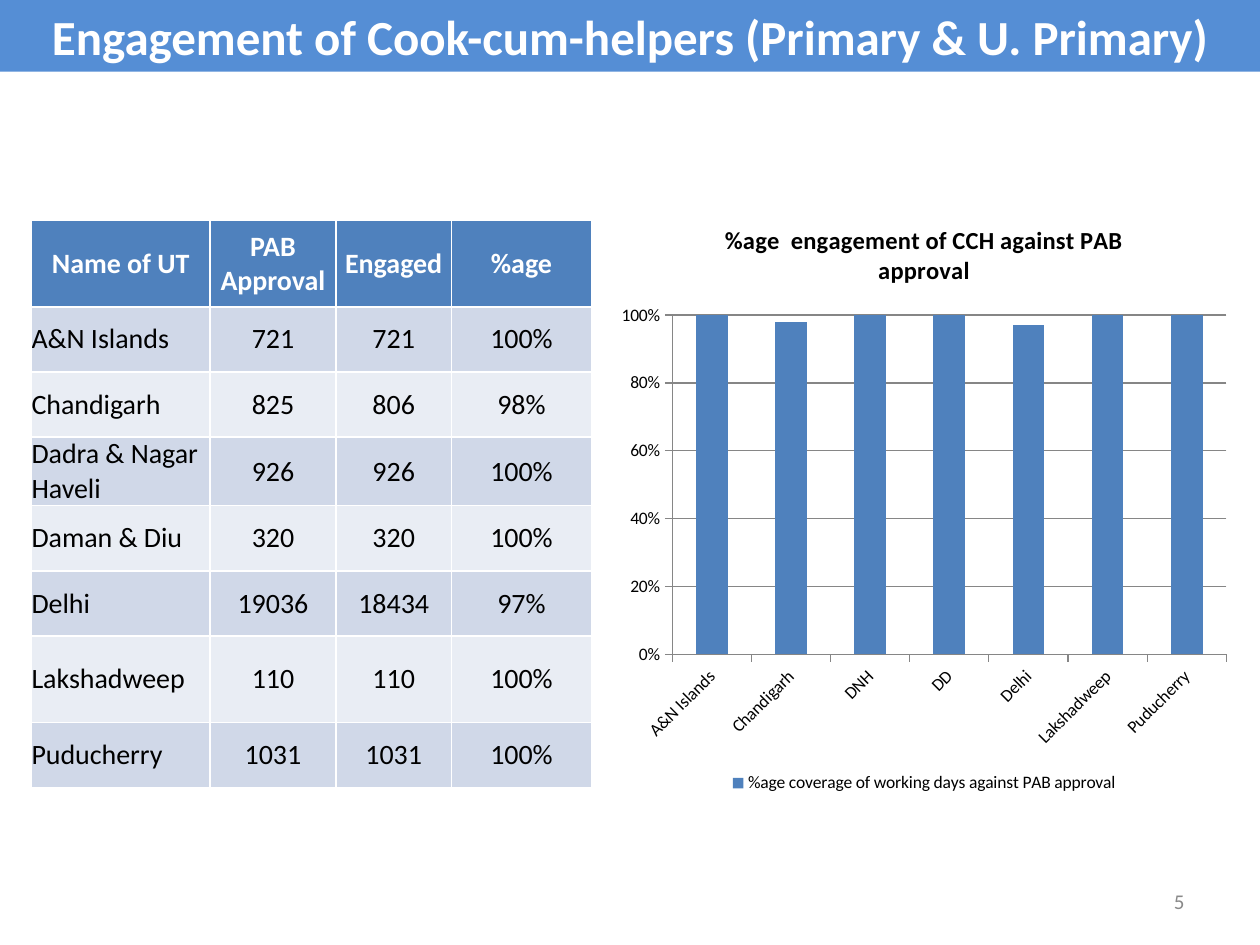
from pptx import Presentation
from pptx.chart.data import CategoryChartData
from pptx.dml.color import RGBColor
from pptx.enum import chart as ch
from pptx.enum.text import MSO_ANCHOR, PP_ALIGN
from pptx.util import Pt

FONT = "Calibri"
TITLE = "Engagement of Cook-cum-helpers (Primary & U. Primary)"
PAGE = "5"
HEADER = ("Name of UT", "PAB Approval", "Engaged", "%age")
# name in the table, name in the chart, approved, engaged, share engaged
TERRITORIES = [
    ("A&N Islands", "A&N Islands", 721, 721, 1),
    ("Chandigarh", "Chandigarh", 825, 806, 0.98),
    ("Dadra & Nagar Haveli", "DNH", 926, 926, 1),
    ("Daman & Diu", "DD", 320, 320, 1),
    ("Delhi", "Delhi", 19036, 18434, 0.97),
    ("Lakshadweep", "Lakshadweep", 110, 110, 1),
    ("Puducherry", "Puducherry", 1031, 1031, 1),
]
CHART_TITLE = "%age  engagement of CCH against PAB approval"
SERIES = "%age coverage of working days against PAB approval"

COLUMN_WIDTHS = (102, 72, 66, 80)
ROW_HEIGHT, TALL_ROW_HEIGHT = 37.3, 49.3
TALL_ROWS = ("Name of UT", "Lakshadweep")
BLUE, GRID = "4F81BD", "868686"
BANDS = ("D0D8E8", "E9EDF4")


def paint(fill, colour):
    fill.solid()
    fill.fore_color.rgb = RGBColor.from_string(colour)


def style(font, size, colour="000000", bold=False):
    font.name, font.size, font.bold = FONT, Pt(size), bold
    font.color.rgb = RGBColor.from_string(colour)


def write(frame, content, size, colour, bold=False, align=PP_ALIGN.CENTER):
    frame.text = content
    frame.word_wrap = True
    frame.vertical_anchor = MSO_ANCHOR.MIDDLE
    paragraph = frame.paragraphs[0]
    paragraph.alignment = align
    style(paragraph.runs[0].font, size, colour, bold)


def add_title(slide):
    title = slide.shapes.title
    title.left, title.top, title.width, title.height = Pt(0), Pt(0), Pt(720), Pt(41)
    paint(title.fill, "558ED5")
    write(title.text_frame, TITLE, 28, "FFFFFF", bold=True)


def add_staff_chart(slide):
    data = CategoryChartData(number_format="0%")
    data.categories = [short for _, short, *_ in TERRITORIES]
    data.add_series(SERIES, [share for *_, share in TERRITORIES])
    chart = slide.shapes.add_chart(ch.XL_CHART_TYPE.COLUMN_CLUSTERED,
                                   Pt(348), Pt(114), Pt(360), Pt(342), data).chart
    style(chart.font, 10)
    chart.has_title = True
    chart.chart_title.text_frame.text = CHART_TITLE
    style(chart.chart_title.text_frame.paragraphs[0].runs[0].font, 14, bold=True)
    chart.has_legend = True
    chart.legend.position = ch.XL_LEGEND_POSITION.BOTTOM
    chart.legend.include_in_layout = False

    plot = chart.plots[0]
    plot.vary_by_categories = False
    plot.gap_width = 150
    paint(plot.series[0].format.fill, BLUE)

    shares = chart.value_axis
    shares.minimum_scale, shares.maximum_scale, shares.major_unit = 0, 1, 0.2
    shares.tick_labels.number_format = "0%"
    shares.tick_labels.number_format_is_linked = False
    for axis in (shares, chart.category_axis):
        axis.major_tick_mark = ch.XL_TICK_MARK.OUTSIDE
        paint(axis.format.line.fill, GRID)
    paint(shares.major_gridlines.format.line.fill, GRID)


def add_staff_table(slide):
    rows = [HEADER] + [(name, str(approved), str(engaged), f"{share:.0%}")
                       for name, _, approved, engaged, share in TERRITORIES]
    heights = [TALL_ROW_HEIGHT if row[0] in TALL_ROWS else ROW_HEIGHT for row in rows]
    table = slide.shapes.add_table(len(rows), len(HEADER), Pt(18), Pt(126),
                                   Pt(sum(COLUMN_WIDTHS)), Pt(sum(heights))).table
    for column, width in zip(table.columns, COLUMN_WIDTHS):
        column.width = Pt(width)
    for r, (row, height) in enumerate(zip(rows, heights)):
        table.rows[r].height = Pt(height)
        is_header = r == 0
        for c, content in enumerate(row):
            cell = table.cell(r, c)
            cell.margin_left = cell.margin_right = cell.margin_top = cell.margin_bottom = 0
            cell.vertical_anchor = MSO_ANCHOR.MIDDLE
            paint(cell.fill, BLUE if is_header else BANDS[(r - 1) % 2])
            cell.text_frame.text = content
            paragraph = cell.text_frame.paragraphs[0]
            paragraph.alignment = PP_ALIGN.CENTER if is_header or c else PP_ALIGN.LEFT
            style(paragraph.runs[0].font, 16, "FFFFFF" if is_header else "000000", is_header)


def add_page_number(slide):
    number = slide.shapes.add_textbox(Pt(516), Pt(500.5), Pt(168), Pt(28.75))
    write(number.text_frame, PAGE, 12, "898989", align=PP_ALIGN.RIGHT)


def main():
    deck = Presentation()
    deck.slide_width, deck.slide_height = Pt(720), Pt(540)
    slide = deck.slides.add_slide(deck.slide_layouts[5])
    add_title(slide)
    add_staff_chart(slide)
    add_staff_table(slide)
    add_page_number(slide)
    deck.save("out.pptx")


if __name__ == "__main__":
    main()
